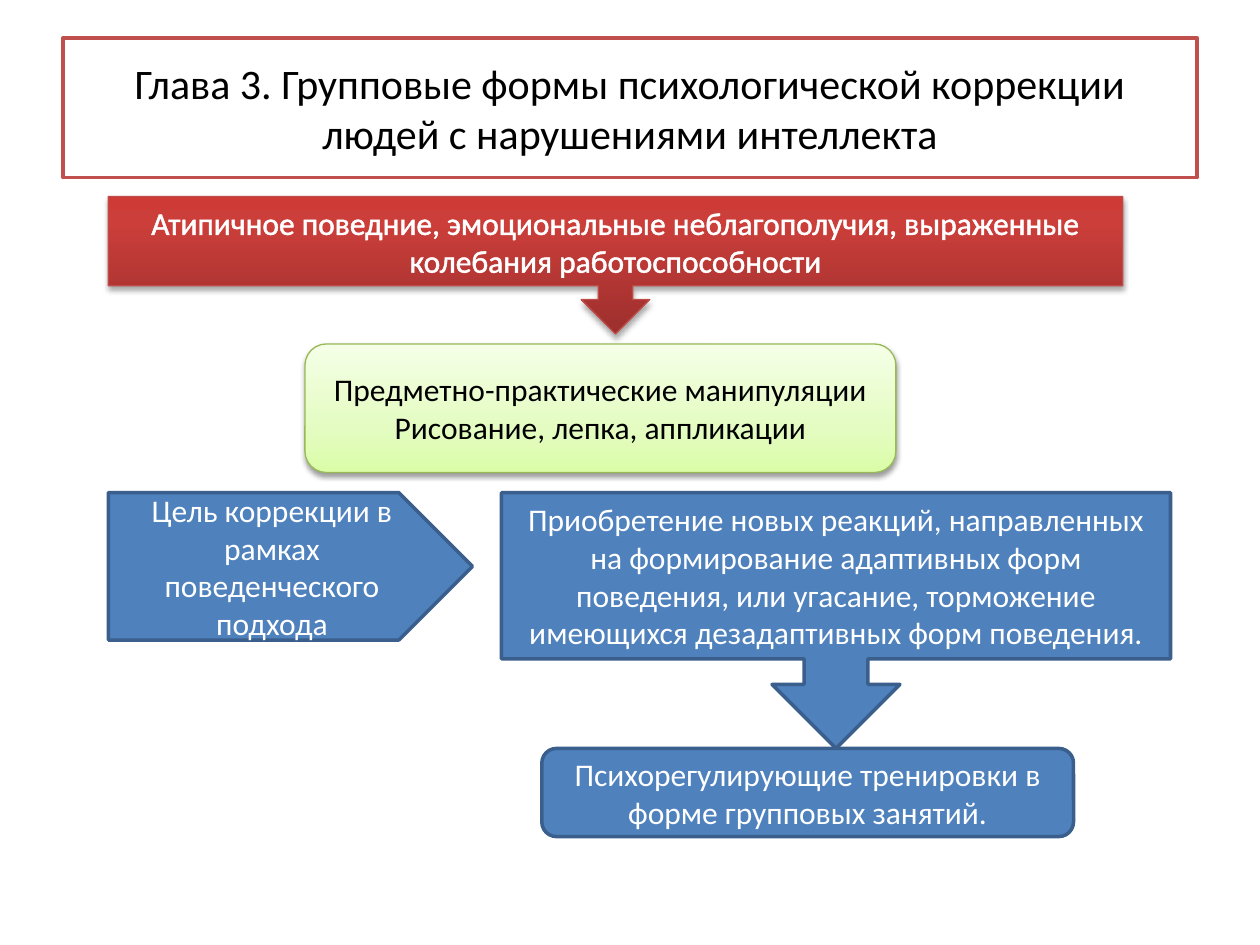
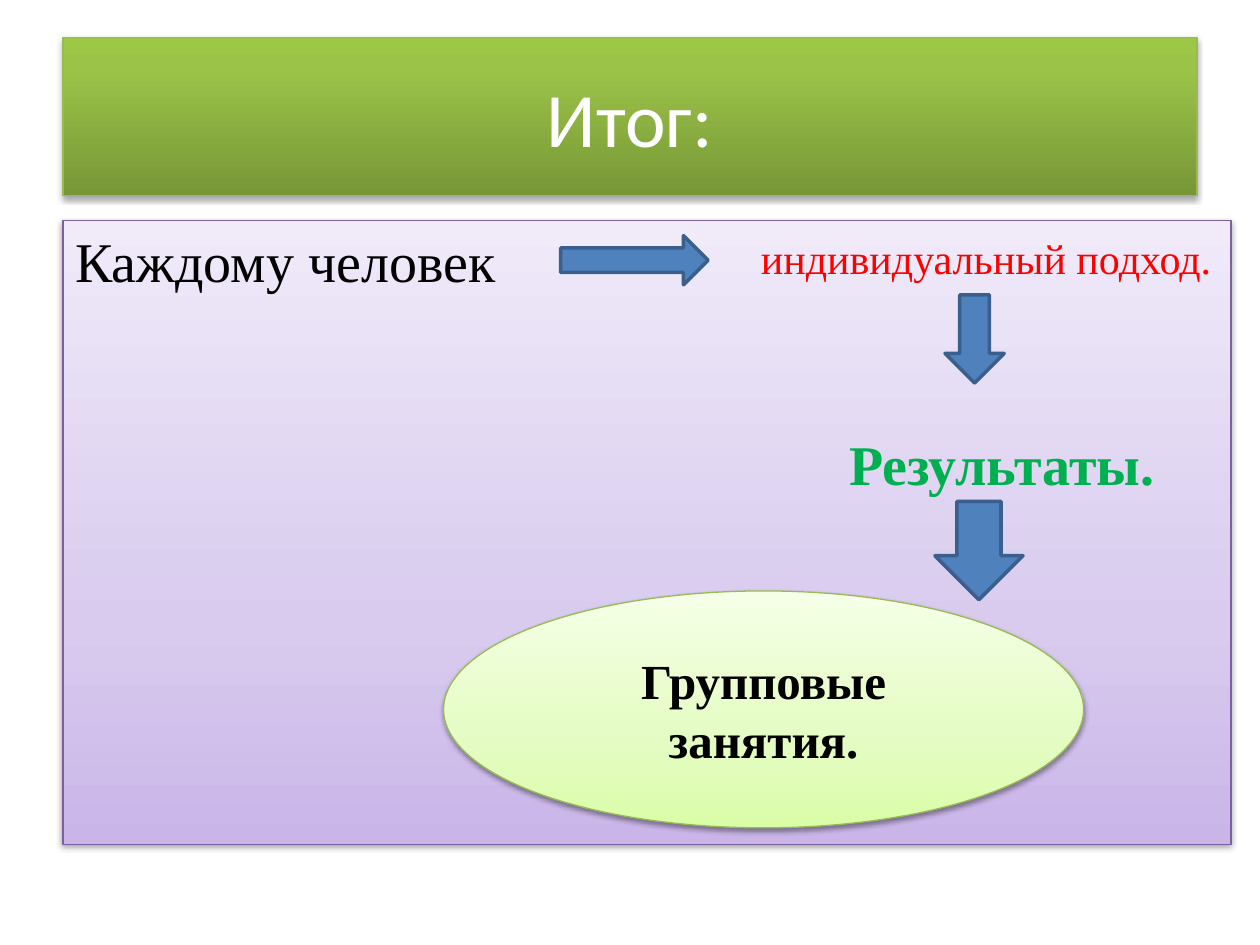
from lxml import etree
from pptx import Presentation
from pptx import util as u
from pptx.dml.color import RGBColor
from pptx.enum import shapes, text
from pptx.oxml.ns import qn

COLORS = {
    "white": "FFFFFF", "black": "000000", "red": "FF0000", "emerald": "00B050",
    "frame": "C0504D", "blue": "4F81BD", "blue_line": "3A5F8C",
    "red_line": "BF4C48", "green_line": "98B955", "purple_line": "7D60A0",
}
# Gradient stops run from the bottom edge (0) to the top edge (100)
GRADIENTS = {
    "red": [(0, "9C2F2D"), (80, "CB3E3A"), (100, "CE3B37")],
    "green": [(0, "779737"), (80, "9BC348"), (100, "9DC746")],
    "light_green": [(0, "DAFDA7"), (35, "E4FCC2"), (100, "F5FFE7")],
    "light_purple": [(0, "C9B5E8"), (35, "D8CBEE"), (100, "F0EAF9")],
}
# Look: fill, gradient, line colour, line width, text colour, shadow (opacity, distance)
LOOKS = {
    "outline": ("white", None, "frame", 2, "black", None),
    "blue": ("blue", None, "blue_line", 2, "white", None),
    "red": (None, "red", "red_line", 0.75, "white", (35, 1.8)),
    "green": (None, "green", "green_line", 0.75, "white", (35, 1.8)),
    "light_green": (None, "light_green", "green_line", 0.75, "black", (38, 1.6)),
    "light_purple": (None, "light_purple", "purple_line", 0.75, "black", (38, 1.6)),
}
SANS, SERIF = "Calibri", "Times New Roman"
SHAPE = shapes.MSO_SHAPE
MIDDLE, TOP = text.MSO_ANCHOR.MIDDLE, text.MSO_ANCHOR.TOP
CENTER, LEFT = text.PP_ALIGN.CENTER, text.PP_ALIGN.LEFT


def rgb(name):
    return RGBColor.from_string(COLORS[name])


def add_color(parent, value):
    return etree.SubElement(parent, qn("a:srgbClr"), val=value)


class Deck:
    def __init__(self):
        self.prs = Presentation()
        self.prs.slide_width, self.prs.slide_height = u.Inches(10), u.Inches(7.5)
        self.s = None

    def slide(self):
        self.s = self.prs.slides.add_slide(self.prs.slide_layouts[6])

    def set_words(self, sp, words, size, color, font=SANS, bold=False,
                  align=CENTER, anchor=MIDDLE, wrap=True):
        tf = sp.text_frame
        tf.text = words
        tf.word_wrap = wrap
        tf.vertical_anchor = anchor
        for p in tf.paragraphs:
            p.alignment = align
            for r in p.runs:
                r.font.name, r.font.size, r.font.bold = font, u.Pt(size), bold
                r.font.color.rgb = rgb(color)

    def shape(self, kind, at, look, words="", size=18, **style):
        sp = self.s.shapes.add_shape(kind, *map(u.Inches, at))
        fill, gradient, line, width, color, shadow = LOOKS[look]
        if gradient:
            self.gradient(sp, GRADIENTS[gradient])
        else:
            sp.fill.solid()
            sp.fill.fore_color.rgb = rgb(fill)
        sp.line.color.rgb = rgb(line)
        sp.line.width = u.Pt(width)
        sp.shadow.inherit = False
        if shadow:
            self.shadow(sp, *shadow)
        if words:
            self.set_words(sp, words, size, color, **style)
        return sp

    def gradient(self, sp, stops):
        sp.fill.gradient()
        sp.fill.gradient_angle = 90
        gs_list = sp.element.spPr.find(".//" + qn("a:gsLst"))
        for gs in list(gs_list):
            gs_list.remove(gs)
        for pos, value in stops:
            add_color(etree.SubElement(gs_list, qn("a:gs"), pos=str(pos * 1000)), value)

    def shadow(self, sp, opacity, distance):
        effects = sp.element.spPr.find(qn("a:effectLst"))
        outer = etree.SubElement(
            effects, qn("a:outerShdw"), blurRad=str(u.Pt(3.1)),
            dist=str(u.Pt(distance)), dir="5400000", rotWithShape="0")
        etree.SubElement(add_color(outer, COLORS["black"]), qn("a:alpha"),
                         val=str(opacity * 1000))

    def title(self, words, height, look, size):
        self.shape(SHAPE.RECTANGLE, (0.5, 0.3, 9, height), look, words, size)

    def label(self, words, at, size, color, bold=False):
        sp = self.s.shapes.add_textbox(*map(u.Inches, at))
        self.set_words(sp, words, size, color, SERIF, bold, LEFT, TOP, wrap=False)

    def outline_text(self, sp, color, width):
        for p in sp.text_frame.paragraphs:
            for r in p.runs:
                ln = etree.Element(qn("a:ln"), w=str(u.Pt(width)))
                add_color(etree.SubElement(ln, qn("a:solidFill")), COLORS[color])
                r._r.get_or_add_rPr().insert(0, ln)

    def hanging(self, sp, indent, before):
        for p in sp.text_frame.paragraphs:
            pPr = p._p.get_or_add_pPr()
            pPr.set("marL", str(u.Inches(indent)))
            pPr.set("indent", str(-u.Inches(indent)))
            space = etree.SubElement(pPr, qn("a:spcBef"))
            etree.SubElement(space, qn("a:spcPct"), val=str(before * 1000))


def group_forms(deck):
    deck.slide()
    deck.title("Глава 3. Групповые формы психологической коррекции "
               "людей с нарушениями интеллекта", 1.11, "outline", 24)

    # Difficulties lead to practical activities
    sp = deck.shape(SHAPE.DOWN_ARROW_CALLOUT, (0.86, 1.56, 8.05, 1.09), "red",
                    "Атипичное поведние, эмоциональные неблагополучия, "
                    "выраженные колебания работоспособности")
    deck.outline_text(sp, "white", 1.45)
    deck.shape(SHAPE.ROUNDED_RECTANGLE, (2.42, 2.73, 4.69, 1.02), "light_green",
               "Предметно-практические манипуляции\nРисование, лепка, аппликации")

    # Goal of correction and its means
    deck.shape(SHAPE.PENTAGON, (0.86, 3.91, 2.89, 1.17), "blue",
               "Цель коррекции в рамках поведенческого подхода")
    deck.shape(SHAPE.DOWN_ARROW_CALLOUT, (3.98, 3.91, 5.31, 2.03), "blue",
               "Приобретение новых реакций, направленных на формирование "
               "адаптивных форм поведения, или угасание, торможение "
               "имеющихся дезадаптивных форм поведения.")
    deck.shape(SHAPE.ROUNDED_RECTANGLE, (4.3, 5.94, 4.22, 0.7), "blue",
               "Психорегулирующие тренировки в форме групповых занятий.")


def summary(deck):
    deck.slide()
    deck.title("Итог:", 1.25, "green", 44)

    # Panel with the starting point
    panel = deck.shape(SHAPE.RECTANGLE, (0.5, 1.75, 9.27, 4.95), "light_purple",
                       "Каждому человек", 32, font=SERIF, align=LEFT, anchor=TOP)
    deck.hanging(panel, 0.38, 20)

    # Chain of steps
    deck.shape(SHAPE.RIGHT_ARROW, (4.45, 1.87, 1.17, 0.39), "blue")
    deck.label("индивидуальный подход.", (5.94, 1.8, 3.82, 0.5), 24, "red")
    deck.shape(SHAPE.DOWN_ARROW, (7.5, 2.34, 0.47, 0.7), "blue")
    deck.label("Результаты.", (6.64, 3.36, 2.65, 0.64), 32, "emerald", bold=True)
    deck.shape(SHAPE.DOWN_ARROW, (7.42, 3.98, 0.7, 0.78), "blue")
    deck.shape(SHAPE.OVAL, (3.52, 4.69, 5.08, 1.88), "light_green",
               "Групповые занятия.", 28, font=SERIF, bold=True)


def main():
    deck = Deck()
    group_forms(deck)
    summary(deck)
    deck.prs.save("out.pptx")


if __name__ == "__main__":
    main()
